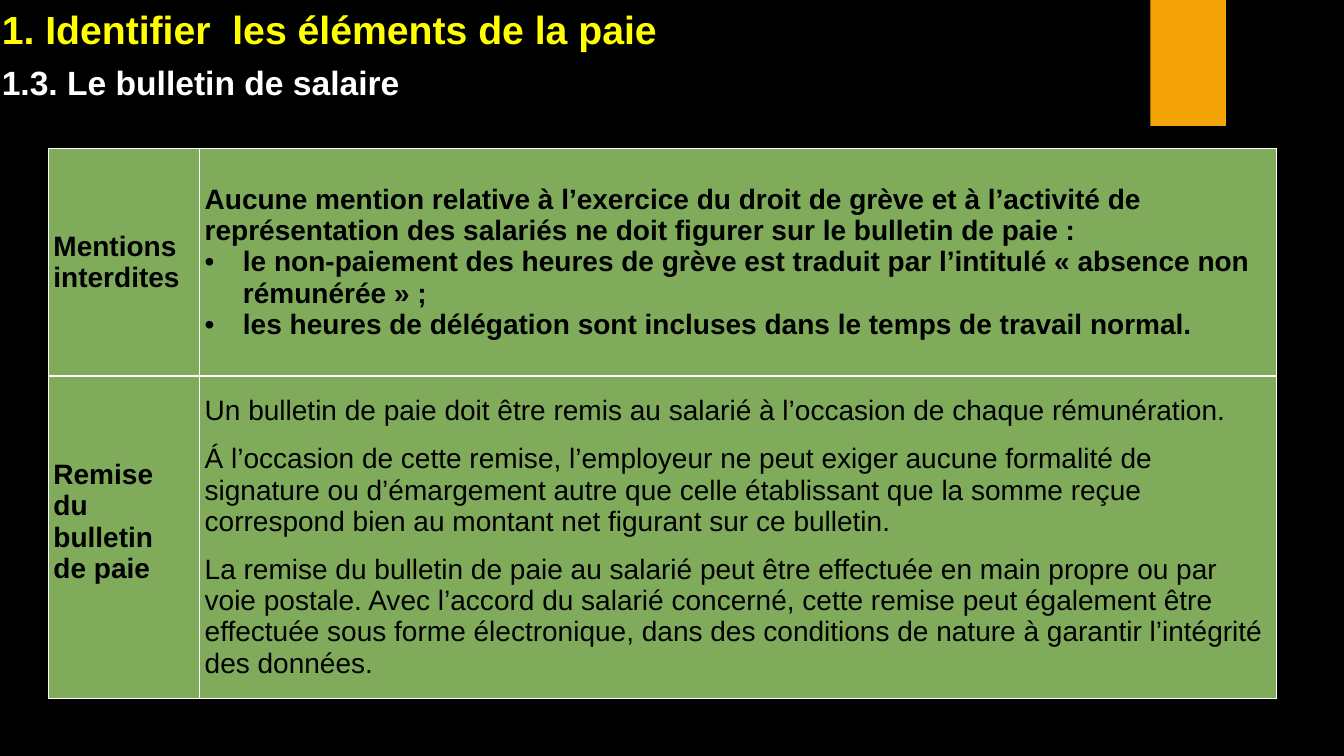
from lxml.etree import SubElement
from pptx import Presentation
from pptx.dml.color import RGBColor as Color
from pptx.enum.shapes import MSO_SHAPE as Shape
from pptx.enum.text import MSO_ANCHOR as Anchor
from pptx.oxml.ns import qn
from pptx.util import Inches, Pt

COLORS = {"night": "000000", "accent": "F5A408", "title": "FFFF00",
          "light": "FFFFFF", "cell": "7FAB5B"}

ROWS = [
    {"height": 2.26, "rule": 2, "bottom": 0,
     "label": ["Mentions interdites"],
     "text": ["Aucune mention relative à l’exercice du droit de grève et à l’activité de "
              "représentation des salariés ne doit figurer sur le bulletin de paie :",
              "le non-paiement des heures de grève est traduit par l’intitulé "
              "« absence non rémunérée » ;",
              "les heures de délégation sont incluses dans le temps de travail normal."],
     "format": {"bold": True, "bullets_from": 1}},
    {"height": 3.2, "rule": 1, "bottom": 0.31,
     "label": ["Remise", "du bulletin", "de paie"],
     "text": ["Un bulletin de paie doit être remis au salarié à l’occasion de chaque rémunération.",
              "Á l’occasion de cette remise, l’employeur ne peut exiger aucune formalité de "
              "signature ou d’émargement autre que celle établissant que la somme reçue "
              "correspond bien au montant net figurant sur ce bulletin.",
              "La remise du bulletin de paie au salarié peut être effectuée en main propre ou "
              "par voie postale. Avec l’accord du salarié concerné, cette remise peut également "
              "être effectuée sous forme électronique, dans des conditions de nature à garantir "
              "l’intégrité des données."],
     "format": {"bold": False, "gap": 12}},
]


class PayslipPage:
    """Holds the slide and its style, and adds each kind of element."""

    def __init__(self, deck):
        self.page = deck.slides.add_slide(deck.slide_layouts[6])
        self.font = "Arial"
        self.paint(self.page.background.fill, "night")

    def paint(self, fill, color):
        fill.solid()
        fill.fore_color.rgb = Color.from_string(COLORS[color])

    def add_text(self, frame, texts, size, color, bold=True, gap=0, bullets_from=None):
        style = {"name": self.font, "size": Pt(size), "bold": bold}
        for index, text in enumerate(texts):
            para = frame.add_paragraph() if index else frame.paragraphs[0]
            if bullets_from is not None and index >= bullets_from:
                self.bullet(para)
            if index and gap:
                para.space_before = Pt(gap)
            span = para.add_run()
            span.text = text
            for key, value in style.items():
                setattr(span.font, key, value)
            span.font.color.rgb = Color.from_string(COLORS[color])

    def bullet(self, para):
        props = para._p.get_or_add_pPr()
        props.set("marL", str(Inches(0.38)))
        props.set("indent", str(-Inches(0.38)))
        SubElement(props, qn("a:buFont"), typeface=self.font)
        SubElement(props, qn("a:buChar"), char="•")

    def heading(self, text, top, width, height, size, color):
        box = self.page.shapes.add_textbox(
            Inches(-0.08), Inches(top), Inches(width), Inches(height))
        box.text_frame.word_wrap = True
        self.add_text(box.text_frame, [text], size, color)

    def block(self, left, top, width, height, color):
        box = self.page.shapes.add_shape(
            Shape.RECTANGLE, Inches(left), Inches(top), Inches(width), Inches(height))
        box.shadow.inherit = False
        self.paint(box.fill, color)
        box.line.fill.background()

    def border(self, cell, widths):
        props = cell._tc.get_or_add_tcPr()
        for side, width in widths.items():
            line = SubElement(props, qn(f"a:ln{side}"), w=str(Pt(width)))
            fill = SubElement(line, qn("a:solidFill"))
            SubElement(fill, qn("a:srgbClr"), val=COLORS["light"])

    def cell(self, cell, texts, widths, bottom=0, **text_format):
        self.border(cell, widths)
        self.paint(cell.fill, "cell")
        layout = {"margin_left": Inches(0.05), "margin_right": Inches(0.05),
                  "margin_top": 0, "margin_bottom": Inches(bottom),
                  "vertical_anchor": Anchor.MIDDLE}
        for key, value in layout.items():
            setattr(cell, key, value)
        self.add_text(cell.text_frame, texts, 20, "night", **text_format)

    def table(self, left, top, columns, rows):
        height = sum(row["height"] for row in rows)
        table = self.page.shapes.add_table(
            len(rows), len(columns), Inches(left), Inches(top),
            Inches(sum(columns)), Inches(height)).table
        table.first_row = table.horz_banding = False
        for column, width in zip(table.columns, columns):
            column.width = Inches(width)
        above = 1
        for index, row in enumerate(rows):
            table.rows[index].height = Inches(row["height"])
            widths = {"L": 1, "R": 1, "T": above, "B": row["rule"]}
            self.cell(table.cell(index, 0), row["label"], widths, row["bottom"])
            self.cell(table.cell(index, 1), row["text"], widths, **row["format"])
            above = row["rule"]


def main():
    deck = Presentation()
    deck.slide_width, deck.slide_height = Inches(13.33), Inches(7.5)
    page = PayslipPage(deck)
    page.block(11.41, 0, 0.75, 1.25, "accent")
    page.heading("1. Identifier  les éléments de la paie", 0, 8.27, 0.57, 28, "title")
    page.heading("1.3. Le bulletin de salaire", 0.57, 4.5, 0.5, 24, "light")
    page.table(0.48, 1.47, [1.5, 10.68], ROWS)
    deck.save("out.pptx")


if __name__ == "__main__":
    main()
